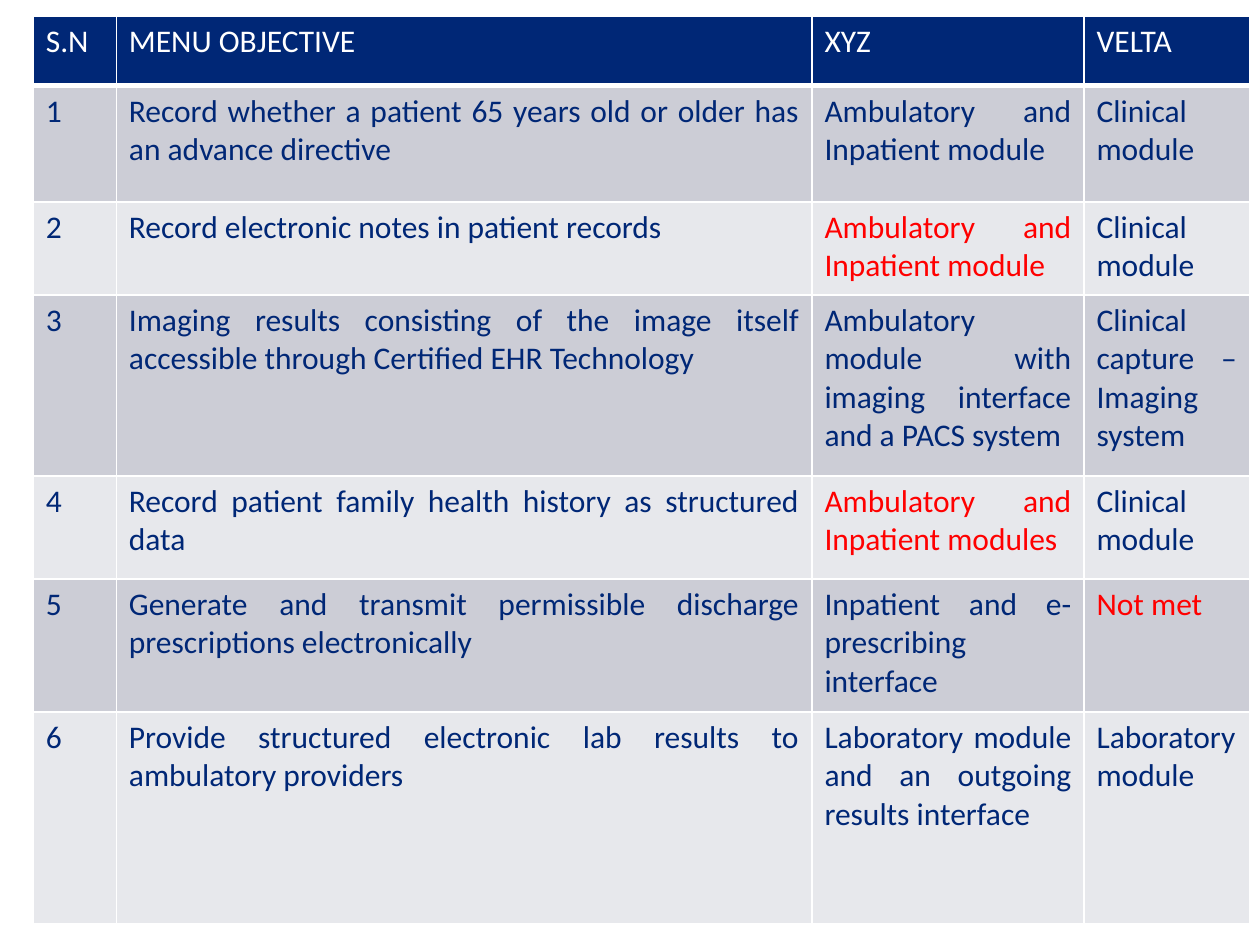
from lxml import etree
from pptx import Presentation
from pptx.dml.color import RGBColor
from pptx.enum.text import PP_ALIGN
from pptx.oxml.ns import qn
from pptx.util import Pt

JUSTIFY = PP_ALIGN.JUSTIFY

COLORS = {
    "navy": "002776",
    "white": "FFFFFF",
    "red": "FF0000",
    "dark_band": "CCCDD6",
    "light_band": "E7E8EC",
}

HEADERS = ["S.N", "MENU OBJECTIVE", "XYZ", "VELTA"]
OBJECTIVES = [
    ("Record whether a patient 65 years old or older has an advance directive",
     "Ambulatory and Inpatient module", "Clinical module"),
    ("Record electronic notes in patient records",
     "Ambulatory and Inpatient module", "Clinical module"),
    ("Imaging results consisting of the image itself accessible through Certified EHR Technology",
     "Ambulatory module with imaging interface and a PACS system",
     "Clinical capture – Imaging system"),
    ("Record patient family health history as structured data",
     "Ambulatory and Inpatient modules", "Clinical module"),
    ("Generate and transmit permissible discharge prescriptions electronically",
     "Inpatient and e-prescribing interface", "Not met"),
    ("Provide structured electronic lab results to ambulatory providers",
     "Laboratory module and an outgoing results interface", "Laboratory module"),
]
RED_CELLS = {(2, 2), (4, 2), (5, 3)}  # (row, column)

TABLE_LEFT, TABLE_TOP = 19, 9
COLUMN_WIDTHS = [47.5, 397.5, 155.5, 94.5]
ROW_HEIGHTS = [40, 66.5, 53, 103.5, 59, 76, 121]


def rgb(name):
    return RGBColor.from_string(COLORS[name])


def add_borders(cell, bottom_width):
    properties = cell._tc.get_or_add_tcPr()
    for side, width in (("lnL", 1), ("lnR", 1), ("lnT", 1), ("lnB", bottom_width)):
        line = etree.SubElement(properties, qn("a:" + side), w=str(Pt(width)))
        fill = etree.SubElement(line, qn("a:solidFill"))
        etree.SubElement(fill, qn("a:srgbClr"), val=COLORS["white"])


def fill_cell(cell, text, fill_color, text_color, bottom_width):
    add_borders(cell, bottom_width)
    cell.fill.solid()
    cell.fill.fore_color.rgb = rgb(fill_color)
    cell.text = text
    paragraph = cell.text_frame.paragraphs[0]
    paragraph.alignment = JUSTIFY
    paragraph.font.name = "Calibri"
    paragraph.font.size = Pt(18)
    paragraph.font.bold = False
    paragraph.font.color.rgb = rgb(text_color)


presentation = Presentation()
presentation.slide_width, presentation.slide_height = Pt(720), Pt(540)
slide = presentation.slides.add_slide(presentation.slide_layouts[6])

# Table grid
rows = [HEADERS] + [(str(number), *cells) for number, cells in enumerate(OBJECTIVES, 1)]
table = slide.shapes.add_table(
    len(rows), len(HEADERS), Pt(TABLE_LEFT), Pt(TABLE_TOP),
    Pt(sum(COLUMN_WIDTHS)), Pt(sum(ROW_HEIGHTS))).table
for column, width in zip(table.columns, COLUMN_WIDTHS):
    column.width = Pt(width)
for row, height in zip(table.rows, ROW_HEIGHTS):
    row.height = Pt(height)

# Header row, then alternating bands
for row_index, texts in enumerate(rows):
    is_header = row_index == 0
    band = "dark_band" if row_index % 2 else "light_band"
    for column_index, text in enumerate(texts):
        body_color = "red" if (row_index, column_index) in RED_CELLS else "navy"
        fill_cell(table.cell(row_index, column_index), text,
                  "navy" if is_header else band,
                  "white" if is_header else body_color,
                  3 if is_header else 1)

presentation.save("out.pptx")
